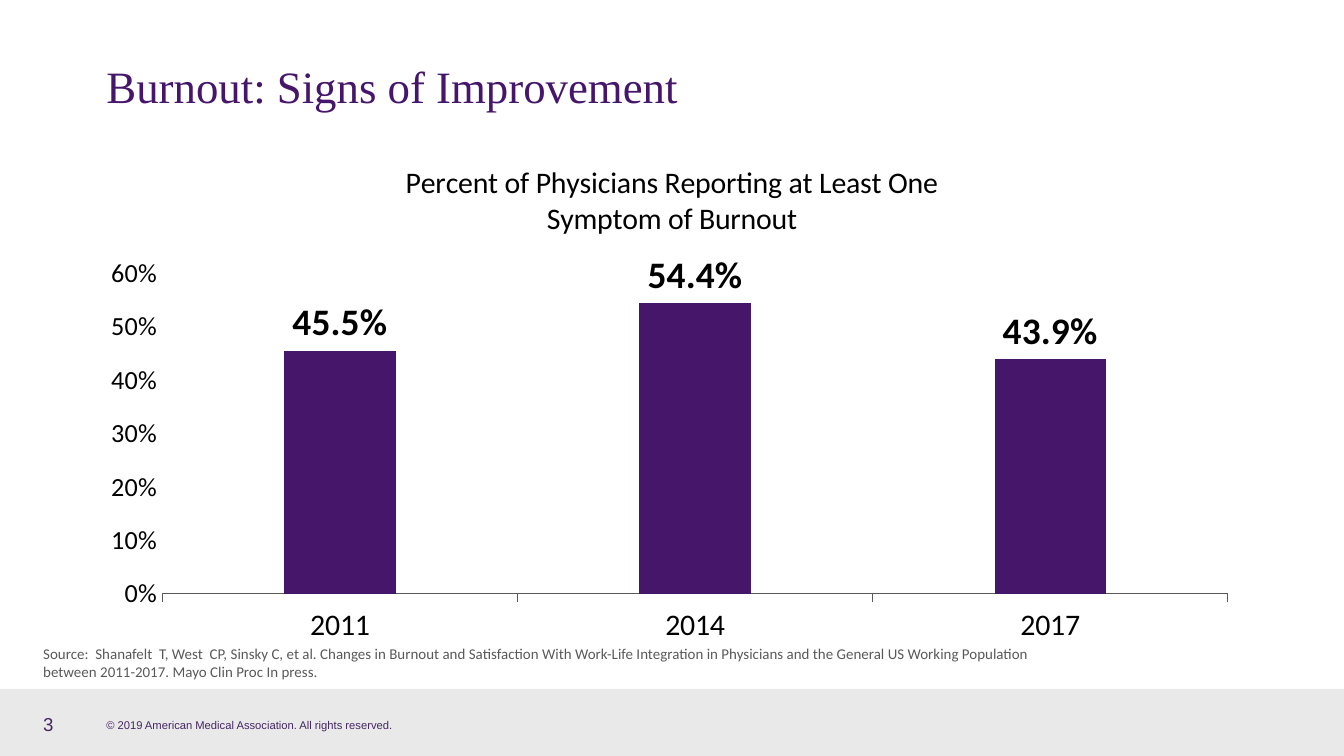
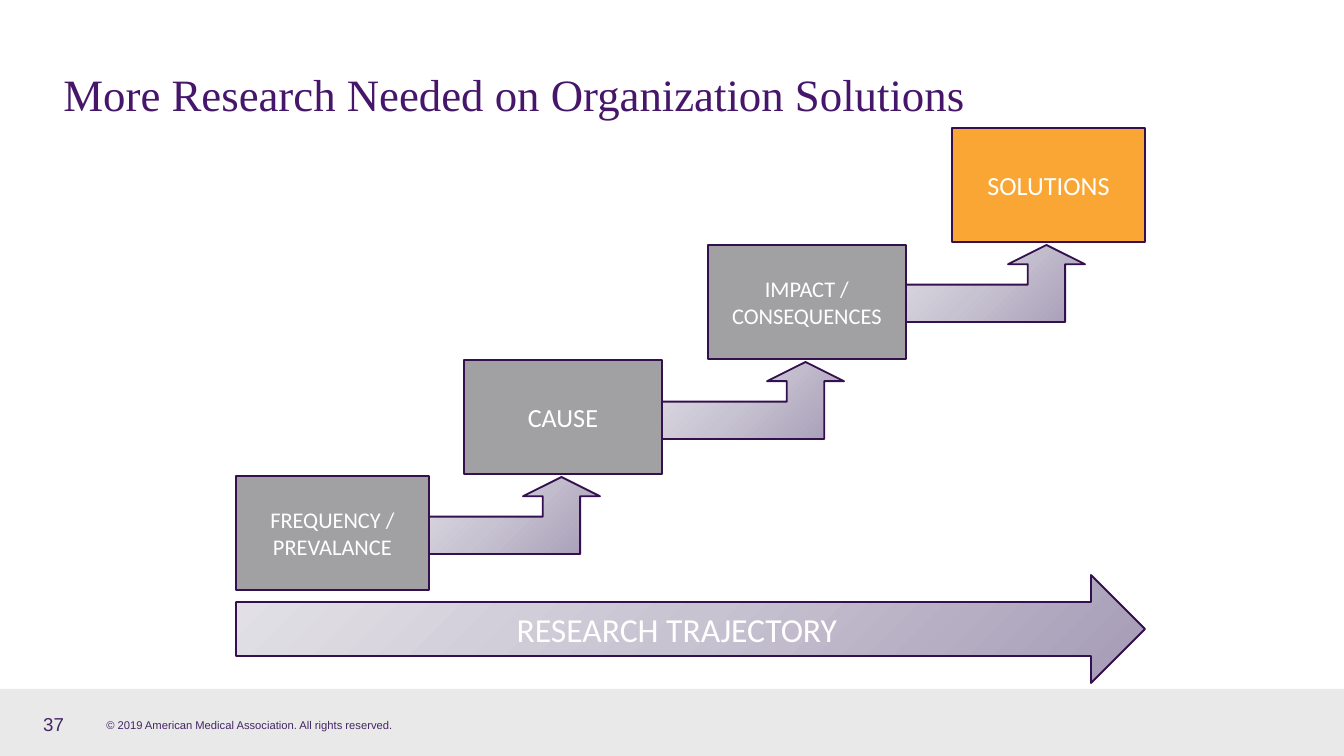
from lxml import etree
from pptx import Presentation
from pptx import util as u
from pptx.chart import data as chart_data
from pptx.dml.color import RGBColor
from pptx.enum import chart as charts, shapes, text
from pptx.oxml import ns, parse_xml

WIDTH, HEIGHT = 1344, 756
SCALE = u.Inches(10) / WIDTH
COLOURS = {
    "purple": "46166B", "footer": "452663", "outline": "34104F",
    "band": "E0E0E0", "grey": "A1A1A4", "orange": "FAA634",
    "muted": "595959", "black": "000000", "white": "FFFFFF",
}
GRADIENT = [(0, "A59BB6"), (50, "C8C3D1"), (100, "E4E2E8")]
SANS, SERIF, FOOTER_FONT = "Calibri", "Times New Roman", "Arial"


def px(*lengths):
    return [u.Emu(round(length * SCALE)) for length in lengths]


def colour(name):
    return RGBColor.from_string(COLOURS[name])


def style(font, size, name, face=SANS, bold=False):
    font.size, font.name, font.bold = u.Pt(size), face, bold
    font.color.rgb = colour(name)


def write(frame, words, size, name, face=SANS,
          align=text.PP_ALIGN.LEFT, anchor=text.MSO_ANCHOR.TOP):
    frame.word_wrap = True
    frame.vertical_anchor = anchor
    para = frame.paragraphs[0]
    para.alignment = align
    span = para.add_run()
    span.text = words
    style(span.font, size, name, face)


def add_text(page, box, words, size, name, face=SANS,
             anchor=text.MSO_ANCHOR.TOP):
    frame = page.shapes.add_textbox(*px(*box)).text_frame
    write(frame, words, size, name, face, anchor=anchor)


def add_block(page, kind, box, fill=None, words=None, size=12):
    """An outlined shape, with the shared gradient when no fill is named."""
    block = page.shapes.add_shape(kind, *px(*box))
    block.shadow.inherit = False
    block.line.color.rgb = colour("outline")
    block.line.width = u.Pt(1)
    if fill:
        block.fill.solid()
        block.fill.fore_color.rgb = colour(fill)
    else:
        fill_gradient(block)
    if words:
        write(block.text_frame, words, size, "white",
              align=text.PP_ALIGN.CENTER, anchor=text.MSO_ANCHOR.MIDDLE)
    return block


def fill_gradient(block):
    """Radial gradient centred on the bottom right corner."""
    stops = "".join(
        f'<a:gs pos="{place * 1000}"><a:srgbClr val="{value}"/></a:gs>'
        for place, value in GRADIENT)
    gradient = parse_xml(
        f'<a:gradFill {ns.nsdecls("a")} rotWithShape="1"><a:gsLst>{stops}</a:gsLst>'
        '<a:path path="circle"><a:fillToRect l="100000" t="100000"/></a:path>'
        '</a:gradFill>')
    block.fill.background()
    props = block._element.spPr
    props.replace(props.find(ns.qn("a:noFill")), gradient)


def add_footer(page, box, number):
    left, top, width, height = box
    band = page.shapes.add_shape(shapes.MSO_SHAPE.RECTANGLE, *px(*box))
    band.shadow.inherit = False
    band.line.fill.background()
    band.fill.solid()
    band.fill.fore_color.rgb = colour("band")
    tint = band._element.spPr.find(ns.qn("a:solidFill"))[0]
    etree.SubElement(tint, ns.qn("a:alpha"), val="70000")
    add_text(page, (left + 93, top + 23, 371, 27),
             "© 2019 American Medical Association. All rights reserved.",
             6, "footer", FOOTER_FONT)
    add_text(page, (left + 30, top + 15, 136, 40), number, 10, "footer",
             FOOTER_FONT, text.MSO_ANCHOR.MIDDLE)


def add_page(deck, title, title_box, number):
    page = deck.slides.add_slide(deck.slide_layouts[5])
    heading = page.shapes.title
    heading.left, heading.top, heading.width, heading.height = px(*title_box)
    write(heading.text_frame, title, 24, "purple", SERIF,
          anchor=text.MSO_ANCHOR.MIDDLE)
    add_footer(page, (0, 689, WIDTH, HEIGHT - 689), number)
    return page


def place_plot(chart, **fractions):
    """Fix the inner plot area as fractions of the chart."""
    area = chart._chartSpace.chart.plotArea
    old = area.find(ns.qn("c:layout"))
    if old is not None:
        area.remove(old)
    parts = "".join(f'<c:{key} val="{value}"/>' for key, value in fractions.items())
    area.insert(0, parse_xml(
        f'<c:layout {ns.nsdecls("c")}><c:manualLayout><c:layoutTarget val="inner"/>'
        '<c:xMode val="edge"/><c:yMode val="edge"/>'
        f'{parts}</c:manualLayout></c:layout>'))


def add_burnout_chart(page, box):
    data = chart_data.CategoryChartData(number_format="0.0%")
    data.categories = ["2011", "2014", "2017"]
    data.add_series("Series 1", (0.455, 0.544, 0.439))
    chart = page.shapes.add_chart(
        charts.XL_CHART_TYPE.COLUMN_CLUSTERED, *px(*box), data).chart
    style(chart.font, 10, "muted")
    chart.has_legend = False

    # Chart title
    chart.has_title = True
    frame = chart.chart_title.text_frame
    lines = ["Percent of Physicians Reporting at Least One", "Symptom of Burnout"]
    for index, line in enumerate(lines):
        para = frame.add_paragraph() if index else frame.paragraphs[0]
        span = para.add_run()
        span.text = line
        style(span.font, 16, "black")
    chart.chart_title.include_in_layout = False
    place_plot(chart, x=0.06, y=0.26, w=0.92, h=0.63)

    # Axes
    years, shares = chart.category_axis, chart.value_axis
    style(years.tick_labels.font, 16, "black")
    years.major_tick_mark = charts.XL_TICK_MARK.OUTSIDE
    years.format.line.color.rgb = colour("muted")
    years.format.line.width = u.Pt(0.5)
    style(shares.tick_labels.font, 14, "black")
    shares.tick_labels.number_format = "0%"
    shares.tick_labels.number_format_is_linked = False
    shares.minimum_scale, shares.maximum_scale, shares.major_unit = 0, 0.6, 0.1
    shares.has_major_gridlines = False
    shares.major_tick_mark = charts.XL_TICK_MARK.NONE
    shares.format.line.fill.background()

    # Columns and their labels
    plot = chart.plots[0]
    plot.gap_width, plot.overlap, plot.vary_by_categories = 219, -27, False
    columns = plot.series[0].format.fill
    columns.solid()
    columns.fore_color.rgb = colour("purple")
    plot.has_data_labels = True
    labels = plot.data_labels
    labels.show_value = True
    labels.number_format, labels.number_format_is_linked = "0.0%", False
    labels.position = charts.XL_LABEL_POSITION.OUTSIDE_END
    style(labels.font, 20, "black", bold=True)


def add_staircase(page, box):
    """Four rising steps, bent arrows between them and a long arrow below."""
    left, top, width, height = box
    step_height = 114
    # x, y, width, fill, words, size
    steps = [
        (0, 348, 193, "grey", "FREQUENCY / PREVALANCE", 12),
        (228, 232, 198, "grey", "CAUSE", 14),
        (472, 117, 198, "grey", "IMPACT / CONSEQUENCES", 12),
        (716, 0, 193, "orange", "SOLUTIONS", 14),
    ]
    for x, y, step_width, *_ in steps[1:]:
        arrow = add_block(
            page, shapes.MSO_SHAPE.BENT_UP_ARROW,
            (left + x + step_width // 2 - 162, top + y + step_height + 3, 199, 77))
        for index, value in enumerate((0.485, 0.5, 0.25)):
            arrow.adjustments[index] = value
    for x, y, step_width, fill, words, size in steps:
        add_block(page, shapes.MSO_SHAPE.RECTANGLE,
                  (left + x, top + y, step_width, step_height), fill, words, size)
    add_block(page, shapes.MSO_SHAPE.RIGHT_ARROW,
              (left, top + height - 108, width, 108),
              words="RESEARCH TRAJECTORY", size=18)


def build_chart_page(deck):
    page = add_page(deck, "Burnout: Signs of Improvement", (93, 20, 1158, 132), "3")
    add_burnout_chart(page, (93, 141, 1158, 509))
    add_text(page, (30, 638, 1052, 50),
             "Source:  Shanafelt  T, West  CP, Sinsky C, et al. Changes in Burnout "
             "and Satisfaction With Work-Life Integration in Physicians and the "
             "General US Working Population between 2011-2017. "
             "Mayo Clin Proc In press.", 8, "muted")


def build_research_page(deck):
    page = add_page(deck, "More Research Needed on Organization Solutions",
                    (50, 28, 1158, 132), "37")
    add_staircase(page, (236, 128, 909, 555))


def main():
    deck = Presentation()
    deck.slide_width, deck.slide_height = px(WIDTH, HEIGHT)
    build_chart_page(deck)
    build_research_page(deck)
    deck.save("out.pptx")


if __name__ == "__main__":
    main()
